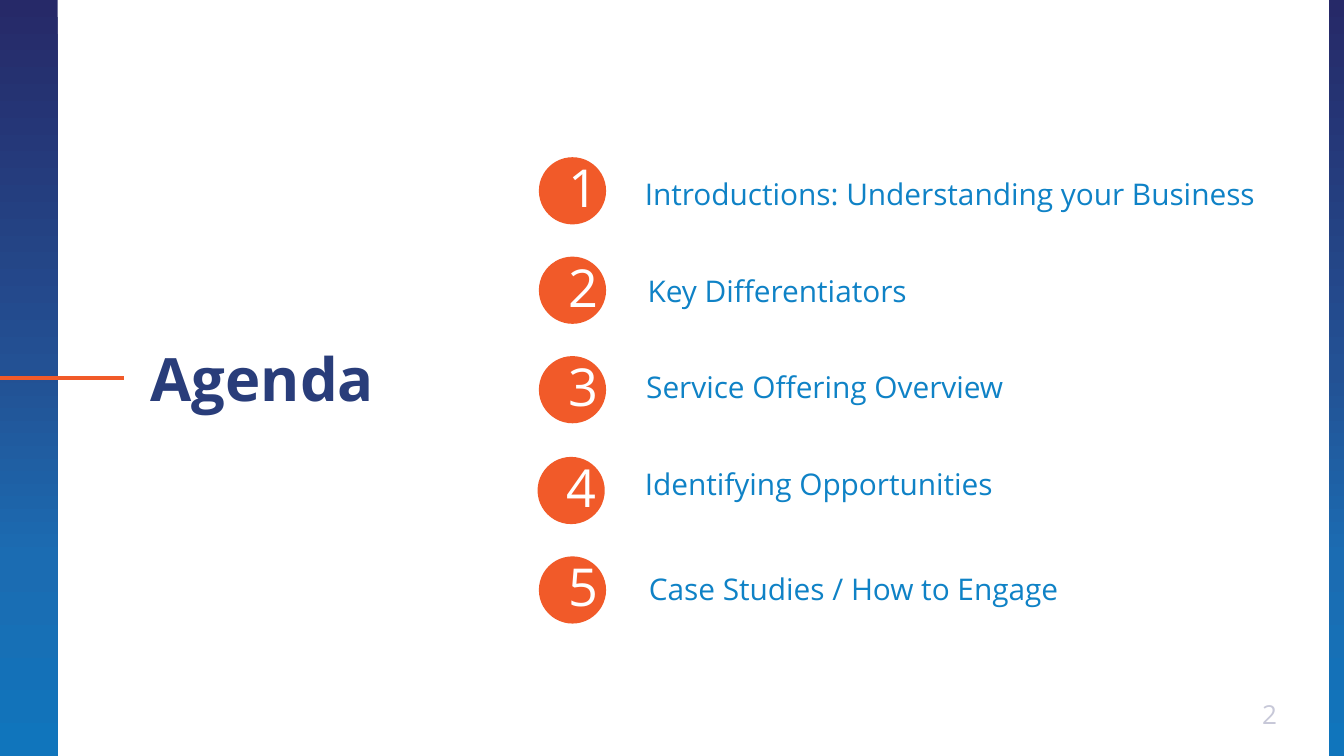
from lxml.etree import SubElement
from pptx import Presentation
from pptx.dml.color import RGBColor
from pptx.enum.shapes import MSO_CONNECTOR, MSO_SHAPE
from pptx.enum.text import MSO_ANCHOR, PP_ALIGN
from pptx.oxml.ns import qn
from pptx.util import Inches, Pt

COLORS = {
    "title": "293D7A",
    "accent": "F15A29",
    "label": "0F82C6",
    "number": "FFFFFF",
    "page": "C7C8D8",
}
GRADIENT = [(0, "262968"), (49, "235194"), (74, "1B6CB2"), (100, "1075BC")]
WIDTH = 10
HEIGHT = WIDTH * 9 / 16
CIRCLE_SIZE = 0.5

# Label, circle left and top, label left, top and width
AGENDA = [
    ("Introductions: Understanding your Business", 4.01, 1.17, 4.7, 1.22, 5),
    ("Key Differentiators", 4.01, 1.91, 4.72, 1.94, 3.85),
    ("Service Offering Overview", 4.01, 2.65, 4.71, 2.66, 4.12),
    ("Identifying Opportunities", 4, 3.4, 4.7, 3.38, 4.1),
    ("Case Studies / How to Engage", 4.01, 4.14, 4.73, 4.16, 3.83),
]


def write(shape, text, size, color, align=PP_ALIGN.LEFT, anchor=MSO_ANCHOR.TOP,
          bold=False, spacing=1.0, wrap=True):
    """Put one formatted run into the shape."""
    frame = shape.text_frame
    frame.word_wrap = wrap
    frame.vertical_anchor = anchor
    paragraph = frame.paragraphs[0]
    paragraph.alignment = align
    paragraph.line_spacing = spacing
    run = paragraph.add_run()
    run.text = text
    run.font.name = "Open Sans"
    run.font.size = Pt(size)
    run.font.bold = bold
    run.font.color.rgb = RGBColor.from_string(COLORS[color])


presentation = Presentation()
presentation.slide_width = Inches(WIDTH)
presentation.slide_height = Inches(HEIGHT)
slide = presentation.slides.add_slide(presentation.slide_layouts[5])
shapes = slide.shapes

# Gradient bars on both edges
for left, width in [(0, 0.43), (9.89, 0.11)]:
    bar = shapes.add_shape(MSO_SHAPE.RECTANGLE, Inches(left), 0,
                           Inches(width), Inches(HEIGHT))
    bar.shadow.inherit = False
    bar.line.fill.background()
    bar.fill.gradient()
    bar.fill.gradient_angle = 270
    stops = bar._element.spPr.find(qn("a:gradFill")).find(qn("a:gsLst"))
    for stop in list(stops):
        stops.remove(stop)
    for percent, color in GRADIENT:
        stop = SubElement(stops, qn("a:gs"), pos=str(percent * 1000))
        SubElement(stop, qn("a:srgbClr"), val=color)

# Accent line leading to the title
accent = shapes.add_connector(MSO_CONNECTOR.STRAIGHT, 0, Inches(2.81),
                              Inches(0.92), Inches(2.81))
accent.line.color.rgb = RGBColor.from_string(COLORS["accent"])
accent.line.width = Pt(2.25)
SubElement(accent._element.spPr, qn("a:effectLst"))

title = shapes.title
title.left, title.top = Inches(1.02), Inches(2.49)
title.width, title.height = Inches(2.48), Inches(0.64)
write(title, "Agenda", 32, "title", bold=True)

# Numbered agenda items
for number, (text, circle_left, circle_top, left, top, width) in enumerate(AGENDA, 1):
    circle = shapes.add_shape(MSO_SHAPE.OVAL, Inches(circle_left), Inches(circle_top),
                              Inches(CIRCLE_SIZE), Inches(CIRCLE_SIZE))
    circle.shadow.inherit = False
    circle.fill.solid()
    circle.fill.fore_color.rgb = RGBColor.from_string(COLORS["accent"])
    circle.line.fill.background()
    frame = circle.text_frame
    frame.margin_left = Inches(0.16)
    frame.margin_right = frame.margin_top = frame.margin_bottom = 0
    write(circle, str(number), 28, "number", PP_ALIGN.CENTER, MSO_ANCHOR.MIDDLE,
          spacing=0.9, wrap=False)

    label = shapes.add_textbox(Inches(left), Inches(top), Inches(width), Inches(0.39))
    write(label, text, 16, "label", spacing=1.14)

page_number = shapes.add_textbox(Inches(8.78), Inches(5.14), Inches(0.82), Inches(0.35))
write(page_number, "2", 14, "page", PP_ALIGN.RIGHT, MSO_ANCHOR.MIDDLE)

presentation.save("out.pptx")
